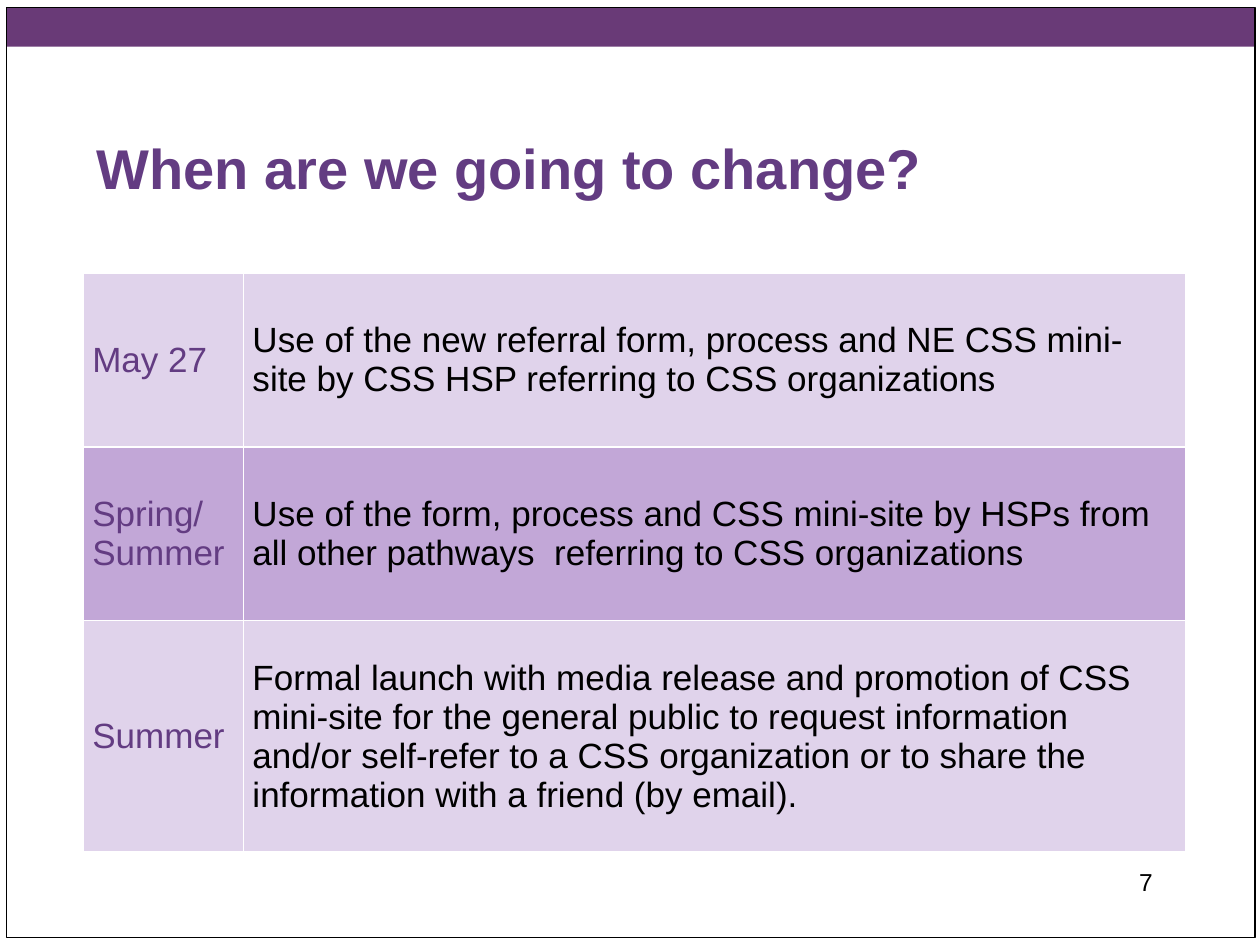
"""Build the slide that shows the dates of the change in a table."""
from dataclasses import dataclass

from lxml.etree import SubElement
from pptx import Presentation
from pptx.dml.color import RGBColor as Rgb
from pptx.enum.shapes import MSO_SHAPE as Shape
from pptx.enum.text import MSO_ANCHOR as Anchor, PP_ALIGN as Align
from pptx.oxml.ns import qn
from pptx.util import Cm, Pt


@dataclass(frozen=True)
class Theme:
    font: str = "Arial"
    bar: str = "693A77"
    heading: str = "633C82"
    ink: str = "000000"
    paper: str = "FFFFFF"
    bands: tuple = ("E0D3EB", "C2A7D7")
    title_size: int = 32
    table_size: int = 20
    number_size: int = 14
    frame_width: float = 0.75
    border_width: float = 1


THEME = Theme()
COLUMN_WIDTHS = (3.23, 19)
ROW_HEIGHTS = (3.5, 3.5, 4.67)
SCHEDULE = (
    ("May 27",
     "Use of the new referral form, process and NE CSS mini-site by CSS HSP "
     "referring to CSS organizations"),
    ("Spring/Summer",
     "Use of the form, process and CSS mini-site by HSPs from all other "
     "pathways  referring to CSS organizations"),
    ("Summer",
     "Formal launch with media release and promotion of CSS mini-site for the "
     "general public to request information and/or self-refer to a CSS "
     "organization or to share the information with a friend (by email)."),
)


def apply_format(target, values):
    for name, value in values.items():
        setattr(target, name, value)


def write_text(frame, text, size, color, bold=False, align=Align.LEFT):
    para = frame.paragraphs[0]
    para.alignment = align
    span = para.add_run()
    span.text = text
    apply_format(span.font, {"name": THEME.font, "size": Pt(size), "bold": bold})
    span.font.color.rgb = Rgb.from_string(color)


def add_text(page, place, text, size, color, anchor=Anchor.TOP, **style):
    box = page.shapes.add_textbox(*map(Cm, place))
    apply_format(box.text_frame, {"word_wrap": True, "vertical_anchor": anchor})
    write_text(box.text_frame, text, size, color, **style)


def add_rectangle(page, place, fill=None, line=None):
    box = page.shapes.add_shape(Shape.RECTANGLE, *map(Cm, place))
    box.shadow.inherit = False
    for paint, color in ((box.fill, fill), (box.line.fill, line)):
        if color:
            paint.solid()
            paint.fore_color.rgb = Rgb.from_string(color)
        else:
            paint.background()
    if line:
        box.line.width = Pt(THEME.frame_width)


def add_borders(cell):
    properties = cell._tc.get_or_add_tcPr()
    for side in ("a:lnL", "a:lnR", "a:lnT", "a:lnB"):
        line = SubElement(properties, qn(side), w=str(Pt(THEME.border_width)))
        paint = SubElement(line, qn("a:solidFill"))
        SubElement(paint, qn("a:srgbClr"), val=THEME.paper)


def format_cell(cell, text, color, fill):
    apply_format(cell, {
        "vertical_anchor": Anchor.MIDDLE,
        "margin_left": Cm(0.18), "margin_right": Cm(0.18),
        "margin_top": 0, "margin_bottom": 0,
    })
    add_borders(cell)
    cell.fill.solid()
    cell.fill.fore_color.rgb = Rgb.from_string(fill)
    write_text(cell.text_frame, text, THEME.table_size, color)


def add_schedule(page, left, top):
    size = (sum(COLUMN_WIDTHS), sum(ROW_HEIGHTS))
    table = page.shapes.add_table(
        len(ROW_HEIGHTS), len(COLUMN_WIDTHS), *map(Cm, (left, top, *size))).table
    apply_format(table, {"first_row": False, "horz_banding": False})
    for column, width in zip(table.columns, COLUMN_WIDTHS):
        column.width = Cm(width)
    for index, (row, height) in enumerate(zip(table.rows, ROW_HEIGHTS)):
        row.height = Cm(height)
        fill = THEME.bands[index % len(THEME.bands)]
        colors = (THEME.heading, THEME.ink)
        for cell, text, color in zip(row.cells, SCHEDULE[index], colors):
            format_cell(cell, text, color, fill)


def main():
    deck = Presentation()
    apply_format(deck, {"slide_width": Cm(25.4), "slide_height": Cm(19.05)})
    page = deck.slides.add_slide(deck.slide_layouts[6])
    add_rectangle(page, (0.13, 0.15, 25.17, 0.79), fill=THEME.bar)
    add_rectangle(page, (0.13, 0.15, 25.17, 18.75), line=THEME.ink)
    add_text(page, (1.7, 1.63, 21.59, 2.54), "When are we going to change?",
             THEME.title_size, THEME.heading, Anchor.BOTTOM, bold=True)
    add_schedule(page, 1.68, 5.51)
    add_text(page, (18.21, 17.35, 5.28, 1.27), "7",
             THEME.number_size, THEME.ink, align=Align.RIGHT)
    deck.save("out.pptx")


if __name__ == "__main__":
    main()
